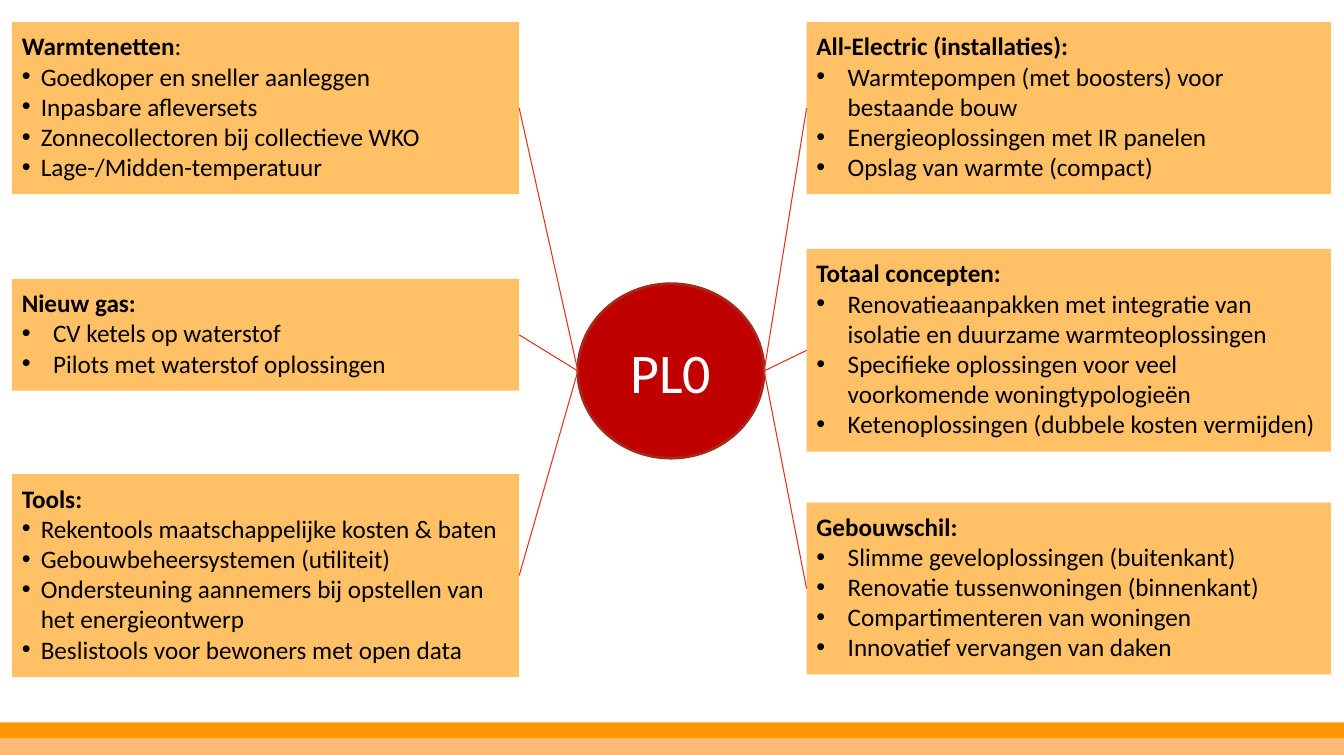
from dataclasses import dataclass

from lxml.etree import SubElement
from pptx import Presentation
from pptx.dml.color import RGBColor
from pptx.enum.shapes import MSO_CONNECTOR, MSO_SHAPE
from pptx.enum.text import MSO_ANCHOR, PP_ALIGN
from pptx.oxml.ns import qn
from pptx.util import Cm, Pt


@dataclass(frozen=True)
class Theme:
    font: str = "Calibri"
    text_size: int = 18
    hub_size: int = 40
    text: str = "000000"
    hub_text: str = "FFFFFF"
    hub_fill: str = "C00000"
    hub_line: str = "A92718"
    box_fill: str = "FFC066"
    spoke: str = "E5301A"
    bands: tuple = ("FF9600", "FFB976")


THEME = Theme()
SLIDE_WIDTH, SLIDE_HEIGHT = 33.91, 19.05
BAND_HEIGHT = 0.41
HUB_LEFT, HUB_TOP, HUB_WIDTH, HUB_HEIGHT = 14.58, 7.16, 4.7, 4.4

# Connection sites of a rectangle
LEFT_SIDE, RIGHT_SIDE = 1, 3

NARROW_INDENT, WIDE_INDENT = 0.48, 0.79

# Per column: left, width, side facing the hub, topics
# Per topic: top, height, bullet indent, heading, bullets
COLUMNS = [
    (0.3, 12.8, RIGHT_SIDE, [
        (0.56, 4.34, NARROW_INDENT, "Warmtenetten", [
            "Goedkoper en sneller aanleggen",
            "Inpasbare afleversets",
            "Zonnecollectoren bij collectieve WKO",
            "Lage-/Midden-temperatuur",
        ]),
        (7.04, 2.82, WIDE_INDENT, "Nieuw gas:", [
            "CV ketels op waterstof",
            "Pilots met waterstof oplossingen",
        ]),
        (11.96, 5.12, NARROW_INDENT, "Tools:", [
            "Rekentools maatschappelijke kosten & baten",
            "Gebouwbeheersystemen (utiliteit)",
            "Ondersteuning aannemers bij opstellen van het energieontwerp",
            "Beslistools voor bewoners met open data",
        ]),
    ]),
    (20.35, 13.23, LEFT_SIDE, [
        (0.56, 4.34, WIDE_INDENT, "All-Electric (installaties):", [
            "Warmtepompen (met boosters) voor bestaande bouw",
            "Energieoplossingen met IR panelen",
            "Opslag van warmte (compact)",
        ]),
        (6.28, 5.12, WIDE_INDENT, "Totaal concepten:", [
            "Renovatieaanpakken met integratie van isolatie en duurzame warmteoplossingen",
            "Specifieke oplossingen voor veel voorkomende woningtypologieën",
            "Ketenoplossingen (dubbele kosten vermijden)",
        ]),
        (12.68, 4.34, WIDE_INDENT, "Gebouwschil:", [
            "Slimme geveloplossingen (buitenkant)",
            "Renovatie tussenwoningen (binnenkant)",
            "Compartimenteren van woningen",
            "Innovatief vervangen van daken",
        ]),
    ]),
]


def color(value):
    return RGBColor.from_string(value)


def add_filled_shape(slide, kind, left, top, width, height, fill):
    shape = slide.shapes.add_shape(kind, Cm(left), Cm(top), Cm(width), Cm(height))
    shape.shadow.inherit = False
    shape.fill.solid()
    shape.fill.fore_color.rgb = color(fill)
    shape.line.fill.background()
    return shape


def format_paragraph(paragraph, size, text_color, alignment):
    paragraph.alignment = alignment
    paragraph.font.name = THEME.font
    paragraph.font.size = Pt(size)
    paragraph.font.color.rgb = color(text_color)


def add_bullet(paragraph, indent):
    properties = paragraph._p.get_or_add_pPr()
    properties.set("marL", str(Cm(indent)))
    properties.set("indent", str(-Cm(indent)))
    SubElement(properties, qn("a:buFont")).set("typeface", "Arial")
    SubElement(properties, qn("a:buChar")).set("char", "•")


def add_topic_box(slide, left, width, top, height, indent, heading, bullets):
    box = add_filled_shape(slide, MSO_SHAPE.RECTANGLE, left, top, width, height,
                           THEME.box_fill)
    frame = box.text_frame
    frame.word_wrap = True
    frame.vertical_anchor = MSO_ANCHOR.MIDDLE
    frame.margin_left = frame.margin_right = Cm(0.25)
    frame.margin_top, frame.margin_bottom = Cm(0.2), Cm(0.3)

    title = frame.paragraphs[0]
    format_paragraph(title, THEME.text_size, THEME.text, PP_ALIGN.LEFT)
    run = title.add_run()
    run.text = heading
    run.font.bold = True
    if not heading.endswith(":"):
        title.add_run().text = ":"

    for bullet in bullets:
        paragraph = frame.add_paragraph()
        paragraph.text = bullet
        add_bullet(paragraph, indent)
        format_paragraph(paragraph, THEME.text_size, THEME.text, PP_ALIGN.LEFT)
    return box


def add_hub(slide):
    hub = add_filled_shape(slide, MSO_SHAPE.OVAL, HUB_LEFT, HUB_TOP,
                           HUB_WIDTH, HUB_HEIGHT, THEME.hub_fill)
    hub.line.color.rgb = color(THEME.hub_line)
    hub.line.width = Pt(2)
    hub.text_frame.vertical_anchor = MSO_ANCHOR.MIDDLE
    paragraph = hub.text_frame.paragraphs[0]
    paragraph.text = "PL0"
    format_paragraph(paragraph, THEME.hub_size, THEME.hub_text, PP_ALIGN.CENTER)
    return hub


def add_spoke(slide, hub, box, box_side):
    """Join the side of a box to the nearest side of the hub."""
    hub_x = hub.left if box_side == RIGHT_SIDE else hub.left + hub.width
    hub_y = hub.top + hub.height // 2
    spoke = slide.shapes.add_connector(MSO_CONNECTOR.STRAIGHT,
                                       hub_x, hub_y, hub_x, hub_y)
    spoke.end_connect(box, box_side)
    spoke.line.color.rgb = color(THEME.spoke)
    spoke.line.width = Pt(0.75)
    SubElement(spoke._element.spPr, qn("a:effectLst"))


def add_bottom_bands(slide):
    first_top = SLIDE_HEIGHT - BAND_HEIGHT * len(THEME.bands)
    for index, fill in enumerate(THEME.bands):
        add_filled_shape(slide, MSO_SHAPE.RECTANGLE, 0,
                         first_top + index * BAND_HEIGHT,
                         SLIDE_WIDTH, BAND_HEIGHT, fill)


def main():
    presentation = Presentation()
    presentation.slide_width = Cm(SLIDE_WIDTH)
    presentation.slide_height = Cm(SLIDE_HEIGHT)
    blank_layout = presentation.slide_layouts[6]
    slide = presentation.slides.add_slide(blank_layout)

    add_bottom_bands(slide)
    hub = add_hub(slide)
    for left, width, hub_side, topics in COLUMNS:
        for topic in topics:
            box = add_topic_box(slide, left, width, *topic)
            add_spoke(slide, hub, box, hub_side)

    presentation.save("out.pptx")


if __name__ == "__main__":
    main()
